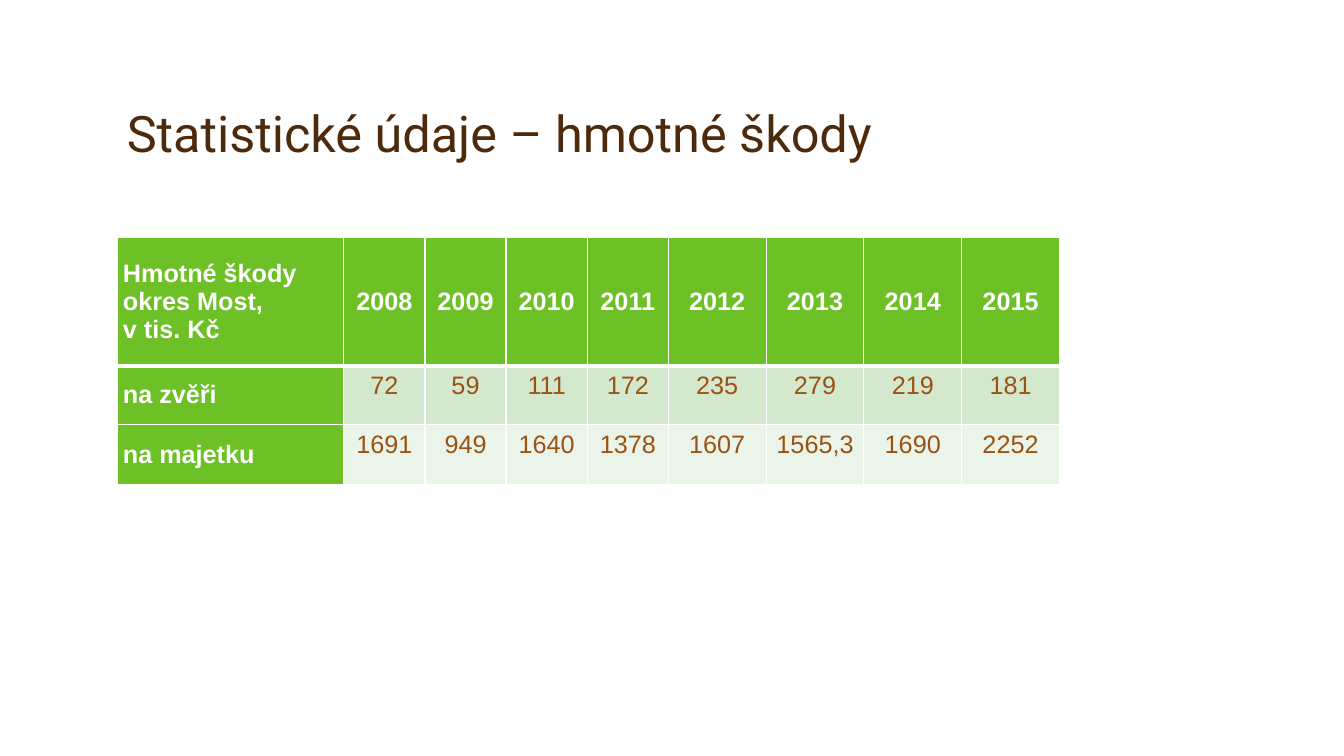
"""Build the slide with the table of material damage in the Most district."""
from lxml.etree import SubElement
from pptx import Presentation
from pptx.dml.color import RGBColor
from pptx.enum.text import MSO_ANCHOR, PP_ALIGN
from pptx.oxml.ns import qn
from pptx.util import Inches, Pt

TITLE = "Statistické údaje – hmotné škody"
DAMAGE = [
    ["Hmotné škody okres Most,\vv tis. Kč", "2008", "2009", "2010", "2011", "2012", "2013", "2014", "2015"],
    ["na zvěři", "72", "59", "111", "172", "235", "279", "219", "181"],
    ["na majetku", "1691", "949", "1640", "1378", "1607", "1565,3", "1690", "2252"],
]
COLUMN_WIDTHS = [2.25] + [0.805] * 4 + [0.97] * 4
ROW_HEIGHTS = [1.27, 0.58, 0.6]
LEFT = Inches(1.16)
PADDING = Inches(0.06)

BROWN = RGBColor(0x4D, 0x2A, 0x0B)
RUST = RGBColor(0x9A, 0x53, 0x15)
WHITE = RGBColor(0xFF, 0xFF, 0xFF)
GREEN = RGBColor(0x6D, 0xC0, 0x25)
ROW_TINTS = [GREEN, RGBColor(0xD4, 0xE8, 0xCD), RGBColor(0xEB, 0xF4, 0xE8)]


def add_borders(cell, row):
    """Draw white cell edges, with a heavier rule below the header row."""
    widths = {"L": 1, "R": 1, "T": 3 if row == 1 else 1, "B": 3 if row == 0 else 1}
    properties = cell._tc.get_or_add_tcPr()
    for side, width in widths.items():
        edge = SubElement(properties, qn(f"a:ln{side}"), w=str(Pt(width)))
        SubElement(SubElement(edge, qn("a:solidFill")), qn("a:srgbClr"), val=str(WHITE))


def style_font(font, name, size, color, bold=False):
    """Set the typeface, size, colour and weight."""
    font.name, font.size, font.bold = name, Pt(size), bold
    font.color.rgb = color


def add_title(slide):
    """Add the slide heading."""
    heading = slide.shapes.add_textbox(LEFT, Inches(0.33), Inches(11), Inches(1.33)).text_frame
    heading.word_wrap = True
    heading.vertical_anchor = MSO_ANCHOR.BOTTOM
    heading.text = TITLE
    style_font(heading.paragraphs[0].font, "Roboto", 36, BROWN)


def add_damage_table(slide):
    """Add the damage figures by year."""
    table = slide.shapes.add_table(
        len(DAMAGE), len(COLUMN_WIDTHS), LEFT, Inches(2.36),
        Inches(sum(COLUMN_WIDTHS)), Inches(sum(ROW_HEIGHTS))).table
    table.first_col = True
    for column, width in zip(table.columns, COLUMN_WIDTHS):
        column.width = Inches(width)
    for row, height in zip(table.rows, ROW_HEIGHTS):
        row.height = Inches(height)
    for r, values in enumerate(DAMAGE):
        for c, value in enumerate(values):
            cell = table.cell(r, c)
            is_label = r == 0 or c == 0
            cell.text = value
            cell.margin_left = cell.margin_right = PADDING
            cell.margin_top = cell.margin_bottom = PADDING
            cell.vertical_anchor = MSO_ANCHOR.MIDDLE if is_label else MSO_ANCHOR.TOP
            add_borders(cell, r)
            cell.fill.solid()
            cell.fill.fore_color.rgb = GREEN if is_label else ROW_TINTS[r]
            paragraph = cell.text_frame.paragraphs[0]
            paragraph.alignment = PP_ALIGN.LEFT if c == 0 else PP_ALIGN.CENTER
            style_font(paragraph.font, "Arial", 18, WHITE if is_label else RUST, is_label)


def main():
    """Create and save the presentation."""
    presentation = Presentation()
    presentation.slide_width, presentation.slide_height = Inches(13.33), Inches(7.5)
    slide = presentation.slides.add_slide(presentation.slide_layouts[6])
    add_title(slide)
    add_damage_table(slide)
    presentation.save("out.pptx")


if __name__ == "__main__":
    main()
